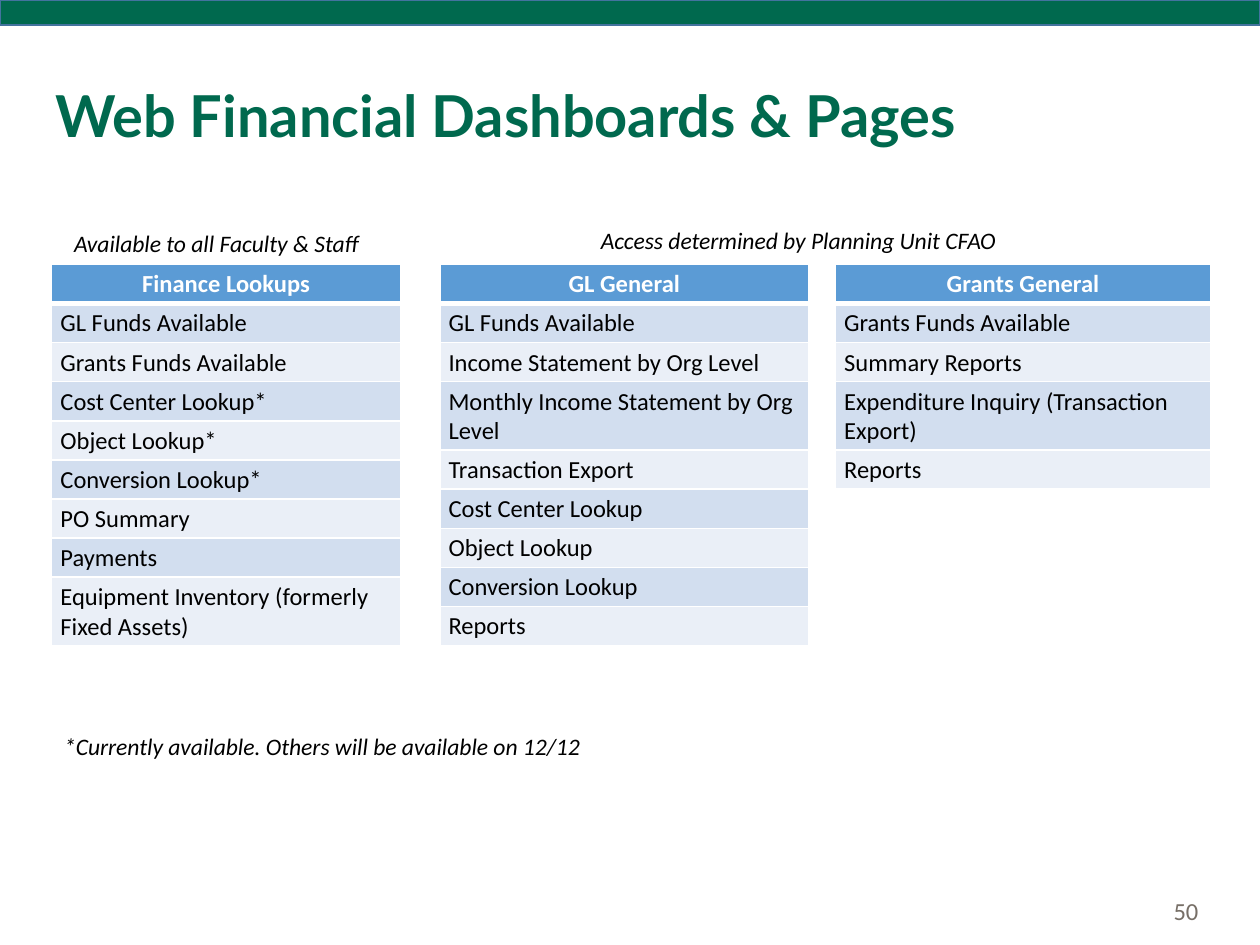
from dataclasses import dataclass

from lxml.etree import SubElement
from pptx import Presentation
from pptx.dml.color import RGBColor
from pptx.enum.shapes import MSO_SHAPE
from pptx.enum.text import MSO_ANCHOR, PP_ALIGN
from pptx.oxml.ns import qn
from pptx.util import Inches, Pt

GREEN = RGBColor(0x00, 0x69, 0x4E)
BAR_LINE = RGBColor(0x43, 0x73, 0x9E)
HEADER = RGBColor(0x5B, 0x9B, 0xD5)
BANDS = (RGBColor(0xD2, 0xDE, 0xEF), RGBColor(0xEA, 0xEF, 0xF7))
WHITE = RGBColor(0xFF, 0xFF, 0xFF)
BLACK = RGBColor(0x00, 0x00, 0x00)
GRAY = RGBColor(0x77, 0x6F, 0x67)

TABLE_TOP = 2.1
ROW_HEIGHT = 0.31
TALL_ROW_HEIGHT = 0.53


@dataclass
class Dashboard:
    title: str
    left: float
    width: float
    pages: list[str]
    tall_row: int


@dataclass
class Label:
    text: str
    left: float
    top: float
    width: float
    height: float = 0.33
    size: float = 13.5
    font: str = "Calibri"
    color: RGBColor = BLACK
    bold: bool = False
    italic: bool = True
    align: PP_ALIGN = PP_ALIGN.LEFT
    anchor: MSO_ANCHOR = MSO_ANCHOR.TOP
    line_spacing: float = 1.0


DASHBOARDS = [
    Dashboard("Finance Lookups", 0.41, 2.77, [
        "GL Funds Available", "Grants Funds Available", "Cost Center Lookup*",
        "Object Lookup*", "Conversion Lookup*", "PO Summary", "Payments",
        "Equipment Inventory (formerly Fixed Assets)"], tall_row=8),
    Dashboard("GL General", 3.49, 2.93, [
        "GL Funds Available", "Income Statement by Org Level",
        "Monthly Income Statement by Org Level", "Transaction Export",
        "Cost Center Lookup", "Object Lookup", "Conversion Lookup",
        "Reports"], tall_row=3),
    Dashboard("Grants General", 6.63, 2.98, [
        "Grants Funds Available", "Summary Reports",
        "Expenditure Inquiry (Transaction Export)", "Reports"], tall_row=3),
]

LABELS = [
    Label("50", 6.61, 7.03, 3, 0.4, size=14, color=GRAY, italic=False,
          align=PP_ALIGN.RIGHT, anchor=MSO_ANCHOR.MIDDLE),
    Label("Web Financial Dashboards & Pages", 0.34, 0.4, 9.34, 1.09, size=33,
          font="Lato", color=GREEN, bold=True, italic=False,
          anchor=MSO_ANCHOR.MIDDLE, line_spacing=0.9),
    Label("Available to all Faculty & Staff", 0.49, 1.77, 2.61),
    Label("Access determined by Planning Unit CFAO", 4.67, 1.74, 4.41),
    Label("*Currently available. Others will be available on 12/12",
          0.41, 5.76, 4.41),
]


def add_label(s, label: Label) -> None:
    box = s.shapes.add_textbox(Inches(label.left), Inches(label.top),
                               Inches(label.width), Inches(label.height))
    tf = box.text_frame
    tf.word_wrap = True
    tf.vertical_anchor = label.anchor
    tf.text = label.text
    p = tf.paragraphs[0]
    p.alignment = label.align
    p.line_spacing = label.line_spacing
    font = p.runs[0].font
    font.name, font.size = label.font, Pt(label.size)
    font.bold, font.italic = label.bold, label.italic
    font.color.rgb = label.color


def set_borders(cell, bottom: float) -> None:
    """Draw white 1 pt cell borders, with the bottom one of the given width."""
    tc_pr = cell._tc.get_or_add_tcPr()
    for side, width in (("L", 1), ("R", 1), ("T", 1), ("B", bottom)):
        line = SubElement(tc_pr, qn(f"a:ln{side}"), w=str(Pt(width)))
        fill = SubElement(line, qn("a:solidFill"))
        SubElement(fill, qn("a:srgbClr"), val=str(WHITE))


def fill_cell(cell, text: str, row: int) -> None:
    is_header = row == 0
    set_borders(cell, bottom=3 if is_header else 1)
    cell.fill.solid()
    cell.fill.fore_color.rgb = HEADER if is_header else BANDS[(row - 1) % 2]
    cell.margin_left = cell.margin_right = Inches(0.07)
    cell.margin_top, cell.margin_bottom = Inches(0.04), Inches(0.03)
    cell.text_frame.text = text
    p = cell.text_frame.paragraphs[0]
    p.alignment = PP_ALIGN.CENTER if is_header else PP_ALIGN.LEFT
    font = p.runs[0].font
    font.name, font.size, font.bold = "Calibri", Pt(14), is_header
    font.color.rgb = WHITE if is_header else BLACK


def add_dashboard(s, dashboard: Dashboard) -> None:
    texts = [dashboard.title, *dashboard.pages]
    height = ROW_HEIGHT * (len(texts) - 1) + TALL_ROW_HEIGHT
    table = s.shapes.add_table(
        len(texts), 1, Inches(dashboard.left), Inches(TABLE_TOP),
        Inches(dashboard.width), Inches(height)).table
    for row, text in enumerate(texts):
        tall = row == dashboard.tall_row
        table.rows[row].height = Inches(TALL_ROW_HEIGHT if tall else ROW_HEIGHT)
        fill_cell(table.cell(row, 0), text, row)


def add_top_bar(s) -> None:
    bar = s.shapes.add_shape(MSO_SHAPE.RECTANGLE, 0, 0, Inches(10), Inches(0.2))
    bar.shadow.inherit = False
    bar.fill.solid()
    bar.fill.fore_color.rgb = GREEN
    bar.line.color.rgb = BAR_LINE
    bar.line.width = Pt(1)


def main() -> None:
    prs = Presentation()
    prs.slide_width, prs.slide_height = Inches(10), Inches(7.5)
    s = prs.slides.add_slide(prs.slide_layouts[6])
    add_top_bar(s)
    for dashboard in DASHBOARDS:
        add_dashboard(s, dashboard)
    for label in LABELS:
        add_label(s, label)
    prs.save("out.pptx")


if __name__ == "__main__":
    main()
